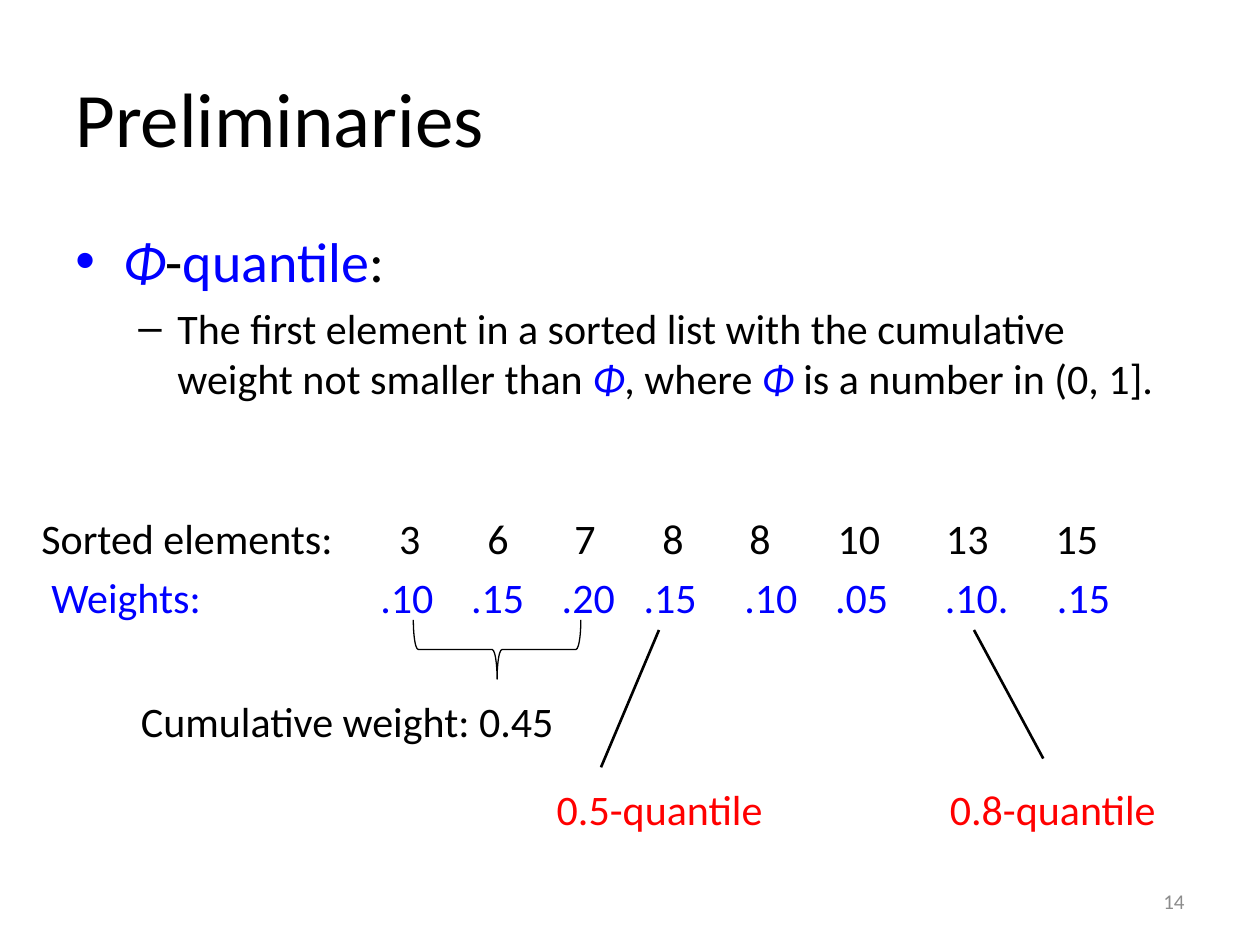
"""Build the Preliminaries slide that explains weighted quantiles."""
from dataclasses import dataclass

from lxml.etree import SubElement
from pptx import Presentation
from pptx.dml.color import RGBColor as RGB
from pptx.enum.shapes import MSO_CONNECTOR as CONN, MSO_SHAPE as SHAPE
from pptx.enum.text import MSO_ANCHOR as ANCHOR, PP_ALIGN as ALIGN
from pptx.oxml.ns import qn
from pptx.util import Inches, Pt


@dataclass(frozen=True)
class Theme:
    font: str = "Calibri"
    ink: RGB = RGB(0, 0, 0)
    term: RGB = RGB(0, 0, 255)
    answer: RGB = RGB(255, 0, 0)
    muted: RGB = RGB(0x8C, 0x8C, 0x8C)
    title: int = 44
    head: int = 32
    body: int = 24
    small: int = 12
    line: float = 1.5
    thin: float = 0.75


T = Theme()
WIDTH, HEIGHT = Inches(10), Inches(7.5)
LABEL_HEIGHT = 6.67
ELEMENTS = [("Sorted elements:", 2.3), ("3", 30.7), ("6", 37.7), ("7", 44.6),
            ("8", 51.6), ("8", 58.5), ("10", 65.5), ("13", 74.1), ("15", 82.8)]
WEIGHTS = [("Weights:", 3.1), (".10", 29.2), (".15", 36.4), (".20", 43.6),
           (".15", 50.1), (".10", 58.1), (".05", 65.3), (".10.", 74),
           (".15", 82.9)]


def place(*shares):
    """Turn alternating horizontal and vertical percentages into lengths."""
    return [int((HEIGHT if i % 2 else WIDTH) * share / 100)
            for i, share in enumerate(shares)]


def add_runs(p, runs, size):
    """Add (text, colour, italic) runs to a paragraph."""
    for text, color, italic in runs:
        r = p.add_run()
        r.text = text
        r.font.name, r.font.size = T.font, Pt(size)
        r.font.color.rgb, r.font.italic = color, italic


def add_box(slide, area, anchor=ANCHOR.TOP, wrap=True):
    """Add an empty text box and return its text frame."""
    tf = slide.shapes.add_textbox(*place(*area)).text_frame
    tf.word_wrap, tf.vertical_anchor = wrap, anchor
    return tf


def add_label(slide, area, text, size=T.body, color=T.ink,
              anchor=ANCHOR.TOP, align=ALIGN.LEFT):
    """Add a text box that holds one run."""
    p = add_box(slide, area, anchor).paragraphs[0]
    p.alignment = align
    add_runs(p, [(text, color, False)], size)


def add_bullet(p, char, left, hang, runs, size):
    """Fill a paragraph as a bullet with a hanging indent."""
    p.space_before = Pt(size * 0.2)
    pPr = p._p.get_or_add_pPr()
    pPr.set("marL", str(Inches(left)))
    pPr.set("indent", str(Inches(-hang)))
    SubElement(pPr, qn("a:buFont"), typeface="Arial")
    SubElement(pPr, qn("a:buChar"), char=char)
    add_runs(p, runs, size)


def add_row(slide, top, cells, color):
    """Add a row of (text, left) cells, the first of which names the row."""
    for i, (text, left) in enumerate(cells):
        width = 8 if i else 27
        add_label(slide, (left, top, width, LABEL_HEIGHT), text, color=color)


def add_line(slide, ends):
    """Add a straight pointer line."""
    c = slide.shapes.add_connector(CONN.STRAIGHT, *place(*ends))
    c.line.color.rgb, c.line.width = T.ink, Pt(T.line)
    SubElement(c._element.spPr, qn("a:effectLst"))


def add_brace(slide, area):
    """Add a brace that opens upward."""
    sp = slide.shapes.add_shape(SHAPE.RIGHT_BRACE, *place(*area))
    sp.rotation = 90
    sp.shadow.inherit = False
    sp.fill.background()
    sp.line.color.rgb, sp.line.width = T.ink, Pt(T.thin)


def add_definition(slide):
    """Add the bulleted definition of a quantile."""
    phi = ("Φ", T.term, True)
    tf = add_box(slide, (5, 23.33, 90, 24.53))
    add_bullet(tf.paragraphs[0], "•", 0.38, 0.38, [
        phi, ("-", T.ink, False), ("quantile", T.term, False),
        (":", T.ink, False)], T.head)
    add_bullet(tf.add_paragraph(), "–", 0.81, 0.31, [
        ("The first element in a sorted list with the cumulative "
         "weight not smaller than ", T.ink, False),
        phi, (", where ", T.ink, False),
        phi, (" is a number in (0, 1].", T.ink, False)], T.body)


def add_example(slide):
    """Add the sorted elements, their weights and the marked quantiles."""
    add_row(slide, 53.6, ELEMENTS, T.ink)
    add_row(slide, 59.87, WEIGHTS, T.term)
    for ends, left, text in [
            ((52.3, 66.67, 47.7, 81.2), 43.2, "0.5-quantile"),
            ((77.3, 66.67, 82.8, 80.27), 74.4, "0.8-quantile")]:
        add_line(slide, ends)
        add_label(slide, (left, 82.27, 18.5, LABEL_HEIGHT), text,
                  color=T.answer)
    add_brace(slide, (37.1, 59.87, 4.7, 17.73))
    add_label(slide, (10.2, 72.93, 35.1, LABEL_HEIGHT),
              "Cumulative weight: 0.45")


def main():
    """Build and save the slide."""
    prs = Presentation()
    prs.slide_width, prs.slide_height = WIDTH, HEIGHT
    slide = prs.slides.add_slide(prs.slide_layouts[6])
    add_label(slide, (5, 4, 90, 16.67), "Preliminaries", T.title,
              anchor=ANCHOR.MIDDLE)
    add_definition(slide)
    add_label(slide, (71.7, 92.67, 23.3, 5.33), "14", T.small, T.muted,
              ANCHOR.MIDDLE, ALIGN.RIGHT)
    add_example(slide)
    prs.save("out.pptx")


if __name__ == "__main__":
    main()
